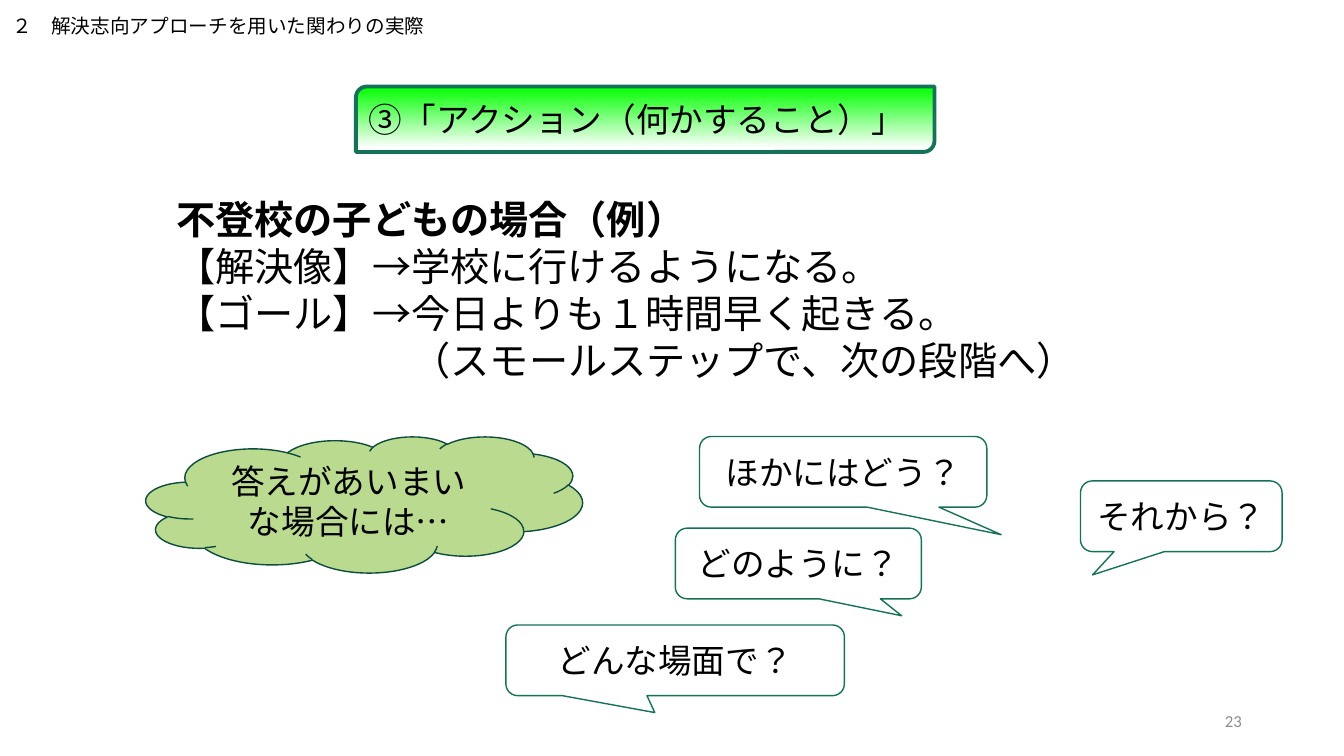
from pptx import Presentation
from pptx.dml.color import RGBColor
from pptx.enum.lang import MSO_LANGUAGE_ID
from pptx.enum.shapes import MSO_SHAPE
from pptx.enum.text import MSO_ANCHOR, MSO_AUTO_SIZE, PP_ALIGN
from pptx.oxml.ns import qn
from pptx.util import Cm, Pt
from lxml.etree import SubElement

JAPANESE = "Noto Sans CJK JP"
BLACK = "000000"
GREEN = "157259"
WHITE = "FFFFFF"


def rgb(code):
    return RGBColor.from_string(code)


def place(element, left, top, width, height):
    element.left, element.top = Cm(left), Cm(top)
    element.width, element.height = Cm(width), Cm(height)


def prepare(element, anchor):
    frame = element.text_frame
    frame.word_wrap = True
    frame.auto_size = MSO_AUTO_SIZE.NONE
    frame.vertical_anchor = anchor
    return frame


def write(paragraph, text, size, align=PP_ALIGN.LEFT, bold=False,
          color=BLACK, font=JAPANESE):
    paragraph.alignment = align
    run = paragraph.add_run()
    run.text = text
    run.font.size = Pt(size)
    run.font.bold = bold
    run.font.name = font
    run.font.language_id = MSO_LANGUAGE_ID.JAPANESE
    run.font.color.rgb = rgb(color)
    SubElement(run.font._element, qn("a:ea")).set("typeface", JAPANESE)


def remove_bullet(paragraph, indent):
    properties = paragraph._p.get_or_add_pPr()
    properties.set("marL", str(Cm(indent)))
    properties.set("indent", "0")
    SubElement(properties, qn("a:buNone"))


def add_section(slide, text):
    section = slide.shapes.title
    place(section, 0.05, 0.23, 11.6, 0.86)
    frame = prepare(section, MSO_ANCHOR.TOP)
    write(frame.paragraphs[0], text, 14, font="Calibri")


def add_example(slide, lines):
    example = slide.placeholders[1]
    place(example, 4.19, 4.8, 24.46, 5.05)
    frame = prepare(example, MSO_ANCHOR.TOP)
    for number, (text, indent, bold) in enumerate(lines):
        paragraph = frame.add_paragraph() if number else frame.paragraphs[0]
        paragraph.space_before = Pt(0)
        remove_bullet(paragraph, indent)
        write(paragraph, text, 28, bold=bold)


def add_figure(slide, kind, box, text, fill, line, weight=1,
               align=PP_ALIGN.CENTER):
    figure = slide.shapes.add_shape(kind, *map(Cm, box))
    figure.shadow.inherit = False
    figure.line.color.rgb = rgb(line)
    figure.line.width = Pt(weight)
    figure.fill.solid()
    figure.fill.fore_color.rgb = rgb(fill)
    write(prepare(figure, MSO_ANCHOR.MIDDLE).paragraphs[0], text, 24, align)
    return figure


def add_heading(slide, text):
    heading = add_figure(slide, MSO_SHAPE.ROUND_2_DIAG_RECTANGLE,
                         (8.97, 2.18, 14.58, 1.65), text, WHITE, GREEN, 2.75,
                         PP_ALIGN.LEFT)
    heading.fill.gradient()
    heading.fill.gradient_angle = 270
    for stop, color, position in zip(heading.fill.gradient_stops,
                                     ("00FF00", WHITE), (0, 0.94)):
        stop.color.rgb = rgb(color)
        stop.position = position


def add_question(slide, text, left, top, width, tail):
    question = add_figure(slide, MSO_SHAPE.ROUNDED_RECTANGULAR_CALLOUT,
                          (left, top, width, 1.78), text, WHITE, GREEN)
    question.adjustments[0], question.adjustments[1] = tail


def add_page_number(slide, number):
    page = slide.shapes.add_textbox(Cm(23.93), Cm(17.65), Cm(7.62), Cm(1.02))
    frame = prepare(page, MSO_ANCHOR.MIDDLE)
    write(frame.paragraphs[0], number, 12, PP_ALIGN.RIGHT,
          color="8C8C8C", font="Calibri")


def main():
    deck = Presentation()
    deck.slide_width, deck.slide_height = Cm(33.87), Cm(19.05)
    slide = deck.slides.add_slide(deck.slide_layouts[1])

    add_section(slide, "２　解決志向アプローチを用いた関わりの実際")
    add_example(slide, [
        ("不登校の子どもの場合（例）", 0, True),
        ("【解決像】→学校に行けるようになる。", 0, False),
        ("【ゴール】→今日よりも１時間早く起きる。", 0, False),
        ("（スモールステップで、次の段階へ）", 5.93, False),
    ])
    add_page_number(slide, "23")
    add_figure(slide, MSO_SHAPE.CLOUD, (3.68, 11, 11, 3.43),
               "答えがあいまいな場合には…", "B9DA8F", "0E4D3C")
    for question in [
        ("ほかにはどう？", 17.63, 11, 7.24, (0.55, 0.89)),
        ("それから？", 27.23, 12.12, 5.08, (-0.44, 0.83)),
        ("どのように？", 17.02, 13.31, 6.2, (0.42, 0.74)),
        ("どんな場面で？", 12.75, 15.75, 8.53, (-0.06, 0.74)),
    ]:
        add_question(slide, *question)
    add_heading(slide, "③「アクション（何かすること）」")

    deck.save("out.pptx")


if __name__ == "__main__":
    main()
